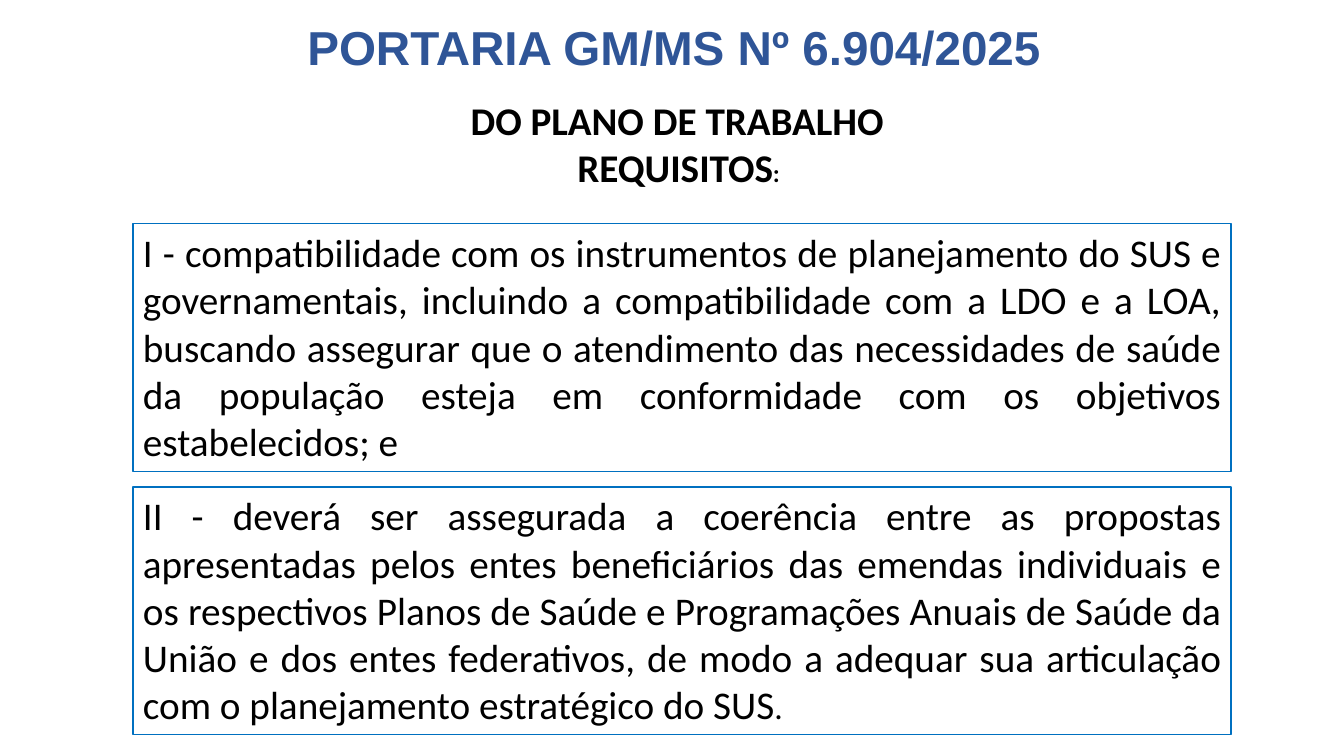
import dataclasses

import pptx
import pptx.dml.color
import pptx.enum.shapes
import pptx.enum.text
import pptx.util

Align = pptx.enum.text.PP_ALIGN
Anchor = pptx.enum.text.MSO_ANCHOR


@dataclasses.dataclass(frozen=True)
class Theme:
    heading_font: str = "Arial"
    body_font: str = "Calibri"
    heading_color: str = "2F5597"
    text_color: str = "000000"
    panel_fill: str = "FFFFFF"
    panel_line: str = "0070C0"
    heading_size: int = 34
    body_size: int = 28
    period_size: int = 24
    colon_size: int = 18
    line_width: int = 1


def rgb(value):
    return pptx.dml.color.RGBColor.from_string(value)


class SlideBuilder:
    """Places elements by percentages of the slide's width and height."""

    def __init__(self, presentation, theme):
        self.presentation = presentation
        self.theme = theme
        self.slide = presentation.slides.add_slide(presentation.slide_layouts[6])

    def area(self, left, top, width, height):
        across = self.presentation.slide_width / 100
        down = self.presentation.slide_height / 100
        return [int(left * across), int(top * down), int(width * across), int(height * down)]

    def fill_text(self, shape, paragraphs, align, anchor=Anchor.TOP, line_spacing=None, **font):
        """Each paragraph is a list of (text, size) runs."""
        frame = shape.text_frame
        frame.word_wrap = True
        frame.vertical_anchor = anchor
        color = font.pop("color", self.theme.text_color)
        font = {"name": self.theme.body_font, **font}
        for index, runs in enumerate(paragraphs):
            paragraph = frame.add_paragraph() if index else frame.paragraphs[0]
            for name, value in {"alignment": align, "line_spacing": line_spacing}.items():
                setattr(paragraph, name, value)
            for text, size in runs:
                run = paragraph.add_run()
                run.text = text
                run.font.color.rgb = rgb(color)
                for name, value in {**font, "size": pptx.util.Pt(size)}.items():
                    setattr(run.font, name, value)

    def text(self, area, paragraphs, align, **style):
        shape = self.slide.shapes.add_textbox(*self.area(*area))
        self.fill_text(shape, paragraphs, align, **style)

    def panel(self, area, runs):
        rectangle = pptx.enum.shapes.MSO_SHAPE.RECTANGLE
        shape = self.slide.shapes.add_shape(rectangle, *self.area(*area))
        shape.shadow.inherit = False
        shape.fill.solid()
        shape.fill.fore_color.rgb = rgb(self.theme.panel_fill)
        shape.line.color.rgb = rgb(self.theme.panel_line)
        shape.line.width = pptx.util.Pt(self.theme.line_width)
        self.fill_text(shape, [runs], Align.JUSTIFY)


def main():
    presentation = pptx.Presentation()
    presentation.slide_width = pptx.util.Inches(13.33)
    presentation.slide_height = pptx.util.Inches(7.5)
    theme = Theme()
    builder = SlideBuilder(presentation, theme)

    # Title
    builder.text(
        (22.13, 0, 66.62, 13.33),
        [[("PORTARIA GM/MS Nº 6.904/2025", theme.heading_size)]],
        Align.LEFT, anchor=Anchor.MIDDLE, line_spacing=0.9,
        name=theme.heading_font, color=theme.heading_color, bold=True,
    )

    # Requirements, stacked in equal panels
    requirements = [
        [("I - compatibilidade com os instrumentos de planejamento do SUS e "
          "governamentais, incluindo a compatibilidade com a LDO e a LOA, "
          "buscando assegurar que o atendimento das necessidades de saúde "
          "da população esteja em conformidade com os objetivos "
          "estabelecidos; e", theme.body_size)],
        [("II - deverá ser assegurada a coerência entre as propostas "
          "apresentadas pelos entes beneficiários das emendas individuais e "
          "os respectivos Planos de Saúde e Programações Anuais de Saúde da "
          "União e dos entes federativos, de modo a adequar sua articulação "
          "com o planejamento estratégico do SUS", theme.body_size),
         (".", theme.period_size)],
    ]
    first_top, pitch = 29.6, 34.8
    for row, runs in enumerate(requirements):
        builder.panel((9.9, first_top + row * pitch, 81.7, 32.8), runs)

    # Subtitle
    builder.text(
        (25.73, 12.13, 49.96, 13.87),
        [[("DO PLANO DE TRABALHO ", theme.body_size)],
         [("REQUISITOS", theme.body_size), (": ", theme.colon_size)]],
        Align.CENTER, bold=True,
    )

    presentation.save("out.pptx")


if __name__ == "__main__":
    main()
